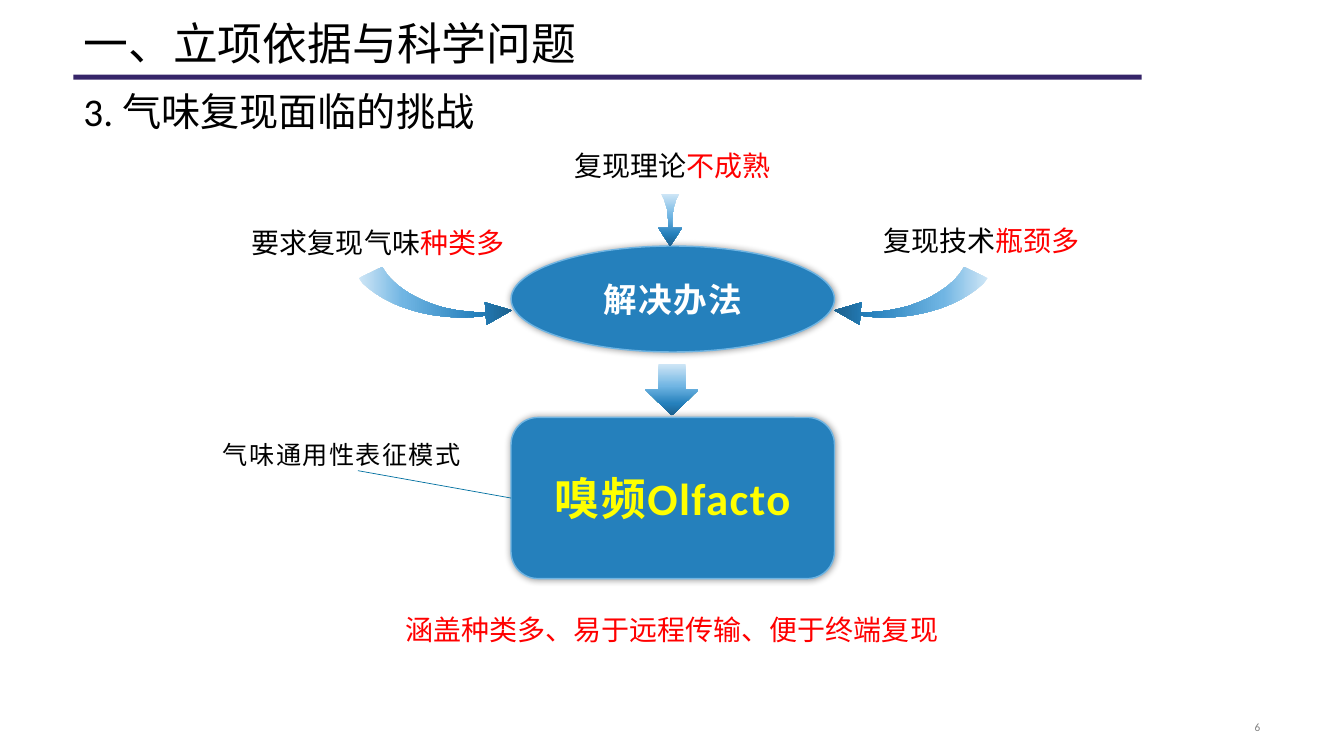
import lxml.etree
import pptx
import pptx.dml.color
import pptx.enum.dml
import pptx.enum.shapes
import pptx.enum.text
import pptx.oxml.ns
import pptx.util

Cm = pptx.util.Cm
Pt = pptx.util.Pt
qn = pptx.oxml.ns.qn
ALIGN = pptx.enum.text.PP_ALIGN
ANCHOR = pptx.enum.text.MSO_ANCHOR
SHAPE = pptx.enum.shapes.MSO_SHAPE
BLACK, RED, BLUE, LIGHT_BLUE = "000000", "FF0000", "2580BC", "70B5E3"


def colour(value):
    return pptx.dml.color.RGBColor.from_string(value)


def trace(outline, steps=10):
    points = []
    for item in outline:
        if len(item) == 2:
            points.append(item)
            continue
        controls = [points[-1], item[0:2], item[2:4], item[4:6]]
        for step in range(1, steps + 1):
            t = step / steps
            weights = [(1 - t) ** 3, 3 * t * (1 - t) ** 2, 3 * t * t * (1 - t), t ** 3]
            points.append(tuple(
                sum(weight * control[axis] for weight, control in zip(weights, controls))
                for axis in (0, 1)))
    return points


presentation = pptx.Presentation()
presentation.slide_width = Cm(33.87)
presentation.slide_height = Cm(19.05)
slide = presentation.slides.add_slide(presentation.slide_layouts[1])
shapes = slide.shapes

rule = shapes.add_shape(SHAPE.RECTANGLE, Cm(1.85), Cm(1.88), Cm(26.92), Cm(0.13))
rule.shadow.inherit = False
rule.fill.solid()
rule.fill.fore_color.rgb = colour("362569")
rule.line.fill.background()

headings = [
    (shapes.title, "一、立项依据与科学问题", 0, 1.9, 32, ANCHOR.BOTTOM),
    (slide.placeholders[1], "3. 气味复现面临的挑战", 2.18, 1.4, 28, ANCHOR.MIDDLE),
]
for placeholder, text, top, height, size, anchor in headings:
    placeholder.left, placeholder.top = Cm(1.85), Cm(top)
    placeholder.width, placeholder.height = Cm(30.15), Cm(height)
    frame = placeholder.text_frame
    frame.text = text
    frame.auto_size = pptx.enum.text.MSO_AUTO_SIZE.NONE
    frame.vertical_anchor = anchor
    paragraph = frame.paragraphs[0]
    properties = paragraph._p.get_or_add_pPr()
    properties.set("marL", "0")
    properties.set("indent", "0")
    lxml.etree.SubElement(properties, qn("a:buNone"))
    paragraph.alignment = ALIGN.LEFT
    paragraph.line_spacing = 0.9
    paragraph.space_before = Pt(0)
    paragraph.font.name = "Calibri"
    paragraph.font.size = Pt(size)
    paragraph.font.color.rgb = colour(BLACK)

nodes = [
    (SHAPE.ROUNDED_RECTANGLE, "嗅频Olfacto", 10.52, 4.06, 32, "FFFF00"),
    (SHAPE.OVAL, "解决办法", 6.2, 2.67, 24, "FFFFFF"),
]
for kind, text, top, height, size, text_colour in nodes:
    node = shapes.add_shape(kind, Cm(12.88), Cm(top), Cm(8.15), Cm(height))
    node.fill.solid()
    node.fill.fore_color.rgb = colour(BLUE)
    node.line.color.rgb = colour(LIGHT_BLUE)
    node.line.width = Pt(1)
    node.shadow.inherit = False
    effects = node._element.spPr.find(qn("a:effectLst"))
    shadow = lxml.etree.SubElement(effects, qn("a:outerShdw"), blurRad=str(Pt(5)), dist="0", dir="0")
    shadow_colour = lxml.etree.SubElement(shadow, qn("a:srgbClr"), val=BLACK)
    lxml.etree.SubElement(shadow_colour, qn("a:alpha"), val="40000")
    frame = node.text_frame
    frame.margin_left = frame.margin_right = 0
    frame.margin_top = frame.margin_bottom = Cm(0.1)
    frame.vertical_anchor = ANCHOR.MIDDLE
    frame.text = text
    paragraph = frame.paragraphs[0]
    paragraph.alignment = ALIGN.CENTER
    paragraph.font.name = "Calibri"
    paragraph.font.size = Pt(size)
    paragraph.font.bold = True
    paragraph.font.color.rgb = colour(text_colour)
    paragraph.font._rPr.set("spc", "100")

left_arrow = trace([
    (9.63, 6.73), (9.75, 6.91),
    (10.03, 7.26, 10.49, 7.54, 11.07, 7.72),
    (11.43, 7.82, 11.81, 7.87, 12.19, 7.87),
    (12.24, 7.87), (12.22, 7.62), (12.9, 7.82), (12.27, 8.18), (12.24, 7.95), (12.07, 7.98),
    (11.51, 8.03, 10.92, 7.98, 10.39, 7.82),
    (9.88, 7.67, 9.47, 7.44, 9.14, 7.14),
    (9.04, 7.01),
])
right_arrow = [(33.93 - x, y) for x, y in left_arrow]
top_half = trace([
    (16.89, 6.2), (17.19, 5.74), (16.94, 5.74), (16.94, 5.54), (16.97, 5.26),
    (16.99, 5.18, 17.02, 5.11, 17.04, 5.03), (17.12, 4.88),
])
top_arrow = top_half + [(33.78 - x, y) for x, y in reversed(top_half[1:])]

down_arrow = shapes.add_shape(SHAPE.DOWN_ARROW, Cm(16.26), Cm(9.17), Cm(1.35), Cm(1.3))
gradient_arrows = [(down_arrow, 270, 43)]
for outline, angle, second_stop in [(left_arrow, 0, 29), (right_arrow, 180, 29), (top_arrow, 270, 43)]:
    points = [(Cm(x), Cm(y)) for x, y in outline]
    builder = shapes.build_freeform(*points[0])
    builder.add_line_segments(points[1:], close=True)
    gradient_arrows.append((builder.convert_to_shape(), angle, second_stop))

for arrow, angle, second_stop in gradient_arrows:
    arrow.shadow.inherit = False
    arrow.line.fill.background()
    arrow.fill.gradient()
    arrow.fill.gradient_angle = angle
    stops = arrow._element.spPr.find(qn("a:gradFill")).find(qn("a:gsLst"))
    for stop in list(stops):
        stops.remove(stop)
    for position, value in [(0, "CFE6F6"), (second_stop, LIGHT_BLUE), (77, BLUE), (100, "1C608D")]:
        stop = lxml.etree.SubElement(stops, qn("a:gs"), pos=str(position * 1000))
        lxml.etree.SubElement(stop, qn("a:srgbClr"), val=value)

NOTO = "Noto Sans CJK SC"
labels = [
    ([("要求复现气味", BLACK), ("种类多", RED)], 6.05, 5.36, 6.96, 1.3, 20, "Calibri", ANCHOR.BOTTOM, ALIGN.CENTER),
    ([("复现理论", BLACK), ("不成熟", RED)], 13.82, 3.58, 6.25, 1.14, 20, NOTO, ANCHOR.BOTTOM, ALIGN.CENTER),
    ([("复现技术", BLACK), ("瓶颈多", RED)], 21.26, 5.46, 6.96, 1.14, 20, "Calibri", ANCHOR.BOTTOM, ALIGN.CENTER),
    ([("涵盖种类多、易于远程传输、便于终端复现", RED)], 9.78, 15.32, 14.3, 1.17, 20, "Calibri", ANCHOR.TOP, ALIGN.CENTER),
    ([("气味通用性表征模式", BLACK)], 5.21, 10.95, 6.81, 1.02, 18, "Calibri", ANCHOR.TOP, ALIGN.CENTER),
    ([("6", "808080")], 23.93, 18.03, 8.08, 0.58, 8, "Calibri", ANCHOR.MIDDLE, ALIGN.RIGHT),
]
for parts, left, top, width, height, size, font_name, anchor, alignment in labels:
    label = shapes.add_textbox(Cm(left), Cm(top), Cm(width), Cm(height))
    frame = label.text_frame
    frame.word_wrap = size != 18
    frame.vertical_anchor = anchor
    paragraph = frame.paragraphs[0]
    paragraph.alignment = alignment
    paragraph.font.name = font_name
    paragraph.font.size = Pt(size)
    if size == 18:
        paragraph.font._rPr.set("spc", "100")
    for text, text_colour in parts:
        run = paragraph.add_run()
        run.text = text
        run.font.color.rgb = colour(text_colour)

leader = shapes.add_connector(
    pptx.enum.shapes.MSO_CONNECTOR.STRAIGHT, Cm(9.02), Cm(11.86), Cm(12.88), Cm(12.55))
leader.line.color.rgb = colour("0070A0")
leader.line.width = Pt(0.5)
lxml.etree.SubElement(leader._element.spPr, qn("a:effectLst"))

presentation.save("out.pptx")
